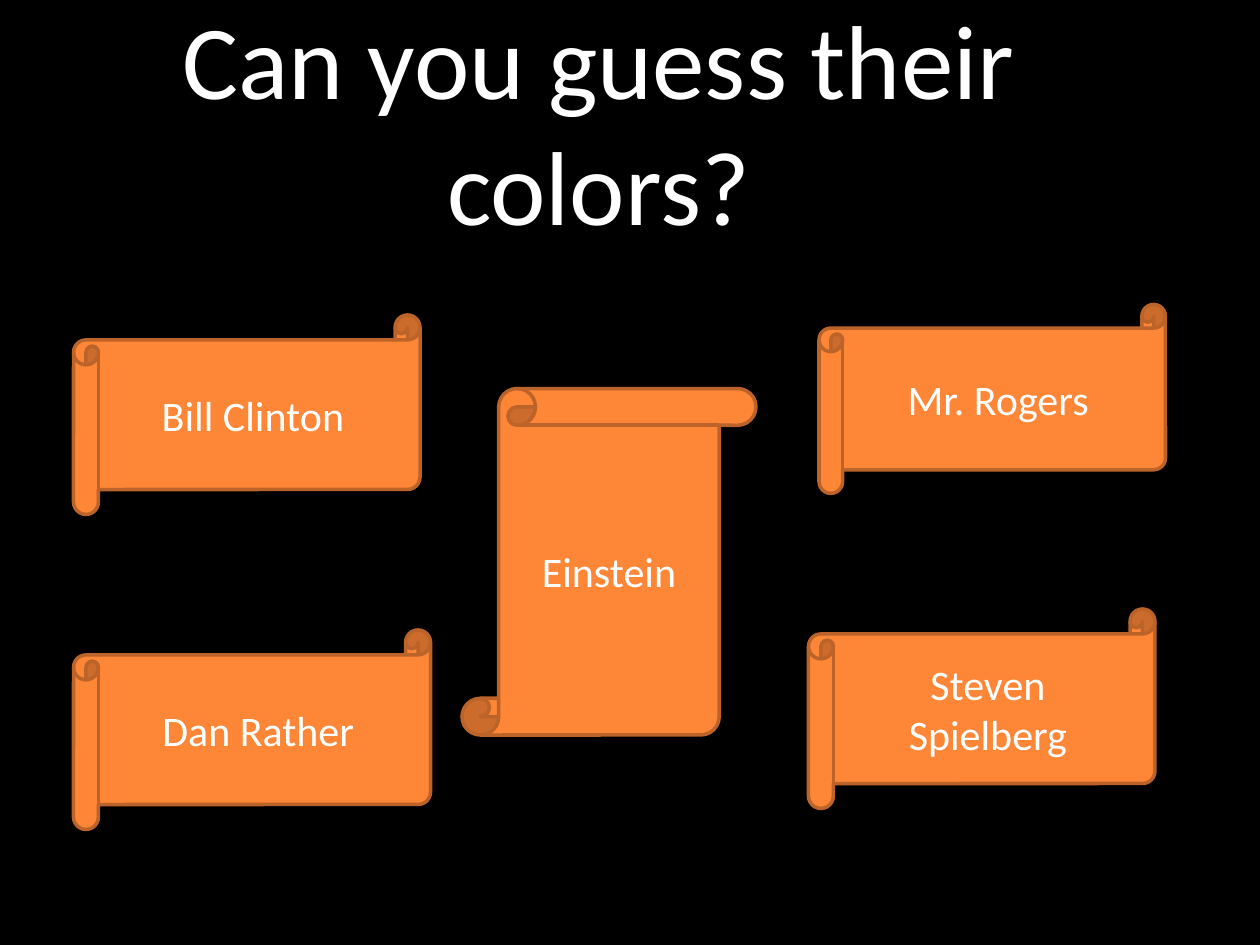
from dataclasses import dataclass

from pptx import Presentation
from pptx.dml.color import RGBColor
from pptx.enum.shapes import MSO_SHAPE as Shape
from pptx.enum.text import MSO_ANCHOR as Anchor, MSO_AUTO_SIZE as AutoSize, PP_ALIGN as Align
from pptx.util import Inches, Pt

# The slide is a grid of 120 columns by 90 rows
COLUMNS, ROWS = 120, 90
WIDTH, HEIGHT = Inches(10), Inches(7.5)

BLACK, WHITE, ORANGE, BROWN = "000000", "FFFFFF", "FE8637", "BC6329"


@dataclass
class Area:
    column: int
    row: int
    columns: int
    rows: int

    def box(self) -> tuple[int, int, int, int]:
        cell_width, cell_height = WIDTH / COLUMNS, HEIGHT / ROWS
        return (round(self.column * cell_width), round(self.row * cell_height),
                round(self.columns * cell_width), round(self.rows * cell_height))


@dataclass
class Scroll:
    lines: list[str]
    area: Area
    kind: Shape = Shape.HORIZONTAL_SCROLL


TITLE_AREA = Area(3, 4, 108, 15)
SCROLLS = [
    Scroll(["Bill Clinton"], Area(7, 30, 33, 19)),
    Scroll(["Einstein"], Area(44, 37, 28, 33), Shape.VERTICAL_SCROLL),
    Scroll(["Steven", "Spielberg"], Area(77, 58, 33, 19)),
    Scroll(["Dan Rather"], Area(7, 60, 34, 19)),
    Scroll(["Mr. Rogers"], Area(78, 29, 33, 18)),
]


def color(value: str) -> RGBColor:
    return RGBColor.from_string(value)


def write(shape, lines: list[str], *, size: int, font: str = "Calibri",
          fill: str = WHITE, align: Align = Align.CENTER) -> None:
    frame = shape.text_frame
    frame.text = "\n".join(lines)
    frame.word_wrap = True
    frame.auto_size = AutoSize.NONE
    frame.vertical_anchor = Anchor.MIDDLE
    for paragraph in frame.paragraphs:
        paragraph.alignment = align
        for run in paragraph.runs:
            run.font.name = font
            run.font.size = Pt(size)
            run.font.color.rgb = color(fill)


def draw_scroll(slide, scroll: Scroll) -> None:
    shape = slide.shapes.add_shape(scroll.kind, *scroll.area.box())
    shape.shadow.inherit = False
    shape.fill.solid()
    shape.fill.fore_color.rgb = color(ORANGE)
    shape.line.color.rgb = color(BROWN)
    shape.line.width = Pt(2)
    write(shape, scroll.lines, size=24)


def main() -> None:
    presentation = Presentation()
    presentation.slide_width, presentation.slide_height = WIDTH, HEIGHT
    slide = presentation.slides.add_slide(presentation.slide_layouts[5])
    slide.background.fill.solid()
    slide.background.fill.fore_color.rgb = color(BLACK)

    # Title
    title = slide.shapes.title
    title.left, title.top, title.width, title.height = TITLE_AREA.box()
    write(title, ["Can you guess their colors?"], size=60)

    # Name scrolls
    for scroll in SCROLLS:
        draw_scroll(slide, scroll)

    presentation.save("out.pptx")


if __name__ == "__main__":
    main()
